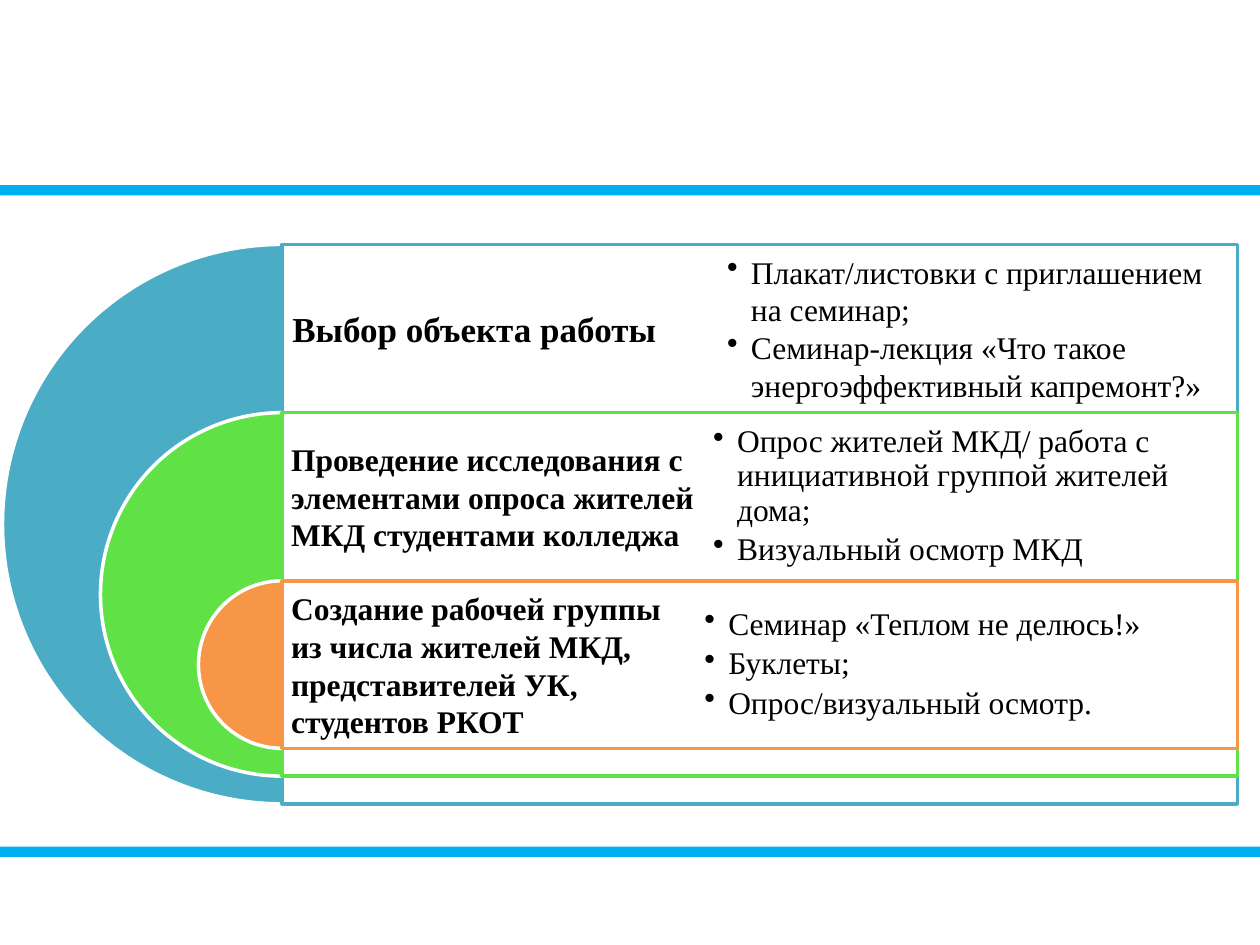
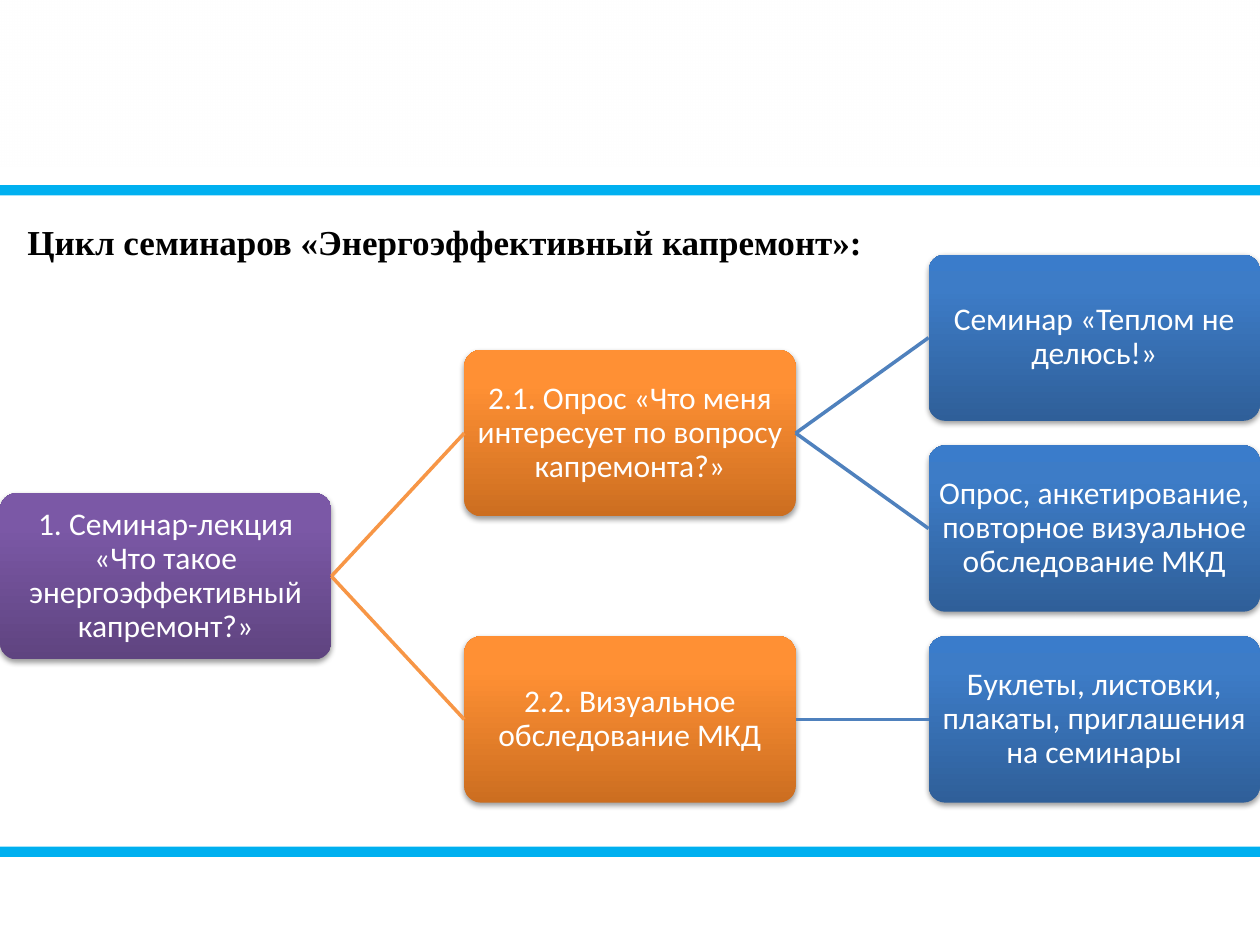
from dataclasses import dataclass

from lxml import etree
from pptx import Presentation
from pptx.dml.color import RGBColor
from pptx.enum.shapes import MSO_CONNECTOR, MSO_SHAPE
from pptx.enum.text import MSO_ANCHOR, PP_ALIGN
from pptx.oxml import parse_xml
from pptx.oxml.ns import nsdecls, qn
from pptx.util import Inches, Pt

RECT, PIE, ROUNDED = MSO_SHAPE.RECTANGLE, MSO_SHAPE.PIE, MSO_SHAPE.ROUNDED_RECTANGLE
STRAIGHT = MSO_CONNECTOR.STRAIGHT
TOP, MIDDLE = MSO_ANCHOR.TOP, MSO_ANCHOR.MIDDLE
LEFT, CENTER = PP_ALIGN.LEFT, PP_ALIGN.CENTER


@dataclass(frozen=True)
class Theme:
    serif: str = "Times New Roman"
    sans: str = "Calibri"
    heading: int = 20
    body: int = 18
    line: int = 2
    ink: str = "000000"
    paper: str = "FFFFFF"
    band: str = "00B0F0"
    teal: str = "4BACC6"
    green: str = "60E146"
    orange: str = "F79646"
    blue: str = "4F81BD"
    # Gradient stops: position, colour, opacity (percent)
    header: tuple = ((0, "FFFFFF", 100), (100, "FFFFFF", 46))
    violet_fade: tuple = ((0, "5F4480", 100), (80, "7B58A6", 100), (100, "7C57A8", 100))
    orange_fade: tuple = ((0, "CC6E20", 100), (80, "FF9034", 100), (100, "FF9136", 100))
    blue_fade: tuple = ((0, "2F5F99", 100), (80, "3D7CC7", 100), (100, "3A7CCB", 100))


theme = Theme()
deck = Presentation()
deck.slide_width, deck.slide_height = Inches(10), Inches(7.5)

# Grid of 100 columns by 75 rows
COL, ROW = deck.slide_width / 100, deck.slide_height / 75


def add_block(slide, kind, x, y, w, h, fill, line=None, angle=90):
    """Preset shape on the grid; fill is a colour or a tuple of gradient stops."""
    block = slide.shapes.add_shape(kind, int(x * COL), int(y * ROW), int(w * COL), int(h * ROW))
    block.shadow.inherit = False
    if isinstance(fill, str):
        block.fill.solid()
        block.fill.fore_color.rgb = RGBColor.from_string(fill)
    else:
        stops = "".join(
            f'<a:gs pos="{pos * 1000}"><a:srgbClr val="{colour}">'
            f'<a:alpha val="{opacity * 1000}"/></a:srgbClr></a:gs>'
            for pos, colour, opacity in fill)
        block._element.spPr.find(qn("a:prstGeom")).addnext(parse_xml(
            f'<a:gradFill {nsdecls("a")} rotWithShape="1"><a:gsLst>{stops}</a:gsLst>'
            f'<a:lin ang="{angle * 60000}" scaled="0"/></a:gradFill>'))
    if line:
        block.line.color.rgb = RGBColor.from_string(line)
        block.line.width = Pt(theme.line)
    else:
        block.line.fill.background()
    return block


def write(frame, lines, size, face, colour, bold=False, align=LEFT, anchor=MIDDLE,
          inset=None, spacing=1.0, after=0, bullets=False):
    """Fill a text frame with equally styled paragraphs."""
    frame.word_wrap = True
    frame.vertical_anchor = anchor
    if inset is not None:
        frame.margin_left = frame.margin_right = Inches(inset)
        frame.margin_top = frame.margin_bottom = Inches(inset)
    for number, line in enumerate(lines):
        paragraph = frame.add_paragraph() if number else frame.paragraphs[0]
        paragraph.text = line
        if bullets:
            properties = paragraph._p.get_or_add_pPr()
            properties.set("marL", str(Inches(0.19)))
            properties.set("indent", str(-Inches(0.19)))
            etree.SubElement(properties, qn("a:buChar")).set("char", "•")
        paragraph.alignment = align
        paragraph.line_spacing = spacing
        paragraph.space_after = Pt(after)
        paragraph.font.size, paragraph.font.name = Pt(size), face
        paragraph.font.bold = bold
        paragraph.font.color.rgb = RGBColor.from_string(colour)


# Shared header and bands
stages_slide, seminars_slide = [deck.slides.add_slide(deck.slide_layouts[6]) for _ in range(2)]
for slide in (stages_slide, seminars_slide):
    add_block(slide, RECT, 0, 0, 100, 13.2, theme.header)
    for band_row in (14.7, 67.2):
        add_block(slide, RECT, 0, band_row, 100, 0.8, theme.band)

# Slide 1: nested stages, each with its activities
# Colour, stage lines, stage size, inset, activity column, line spacing, space after, activities
stages = [
    (theme.teal, ["Выбор объекта работы"], theme.heading, 0.08, 55, 1.0, 0,
     ["Плакат/листовки с приглашением на семинар;",
      "Семинар-лекция «Что такое энергоэффективный капремонт?»"]),
    (theme.green,
     ["Проведение исследования с элементами опроса жителей МКД студентами колледжа"],
     theme.body, 0.07, 53.9, 0.9, 3,
     ["Опрос жителей МКД/ работа с инициативной группой жителей дома;",
      "Визуальный осмотр МКД"]),
    (theme.orange,
     ["Создание рабочей группы", "из числа жителей МКД, представителей УК,", "студентов РКОТ"],
     theme.body, 0.07, 53.2, 0.9, 3,
     ["Семинар «Теплом не делюсь!»", "Буклеты;", "Опрос/визуальный осмотр."]),
]
STAGE_LEFT, STAGE_RIGHT, STAGE_TOP = 22.4, 98.2, 19.4
STAGE_PITCH, STAGE_HEIGHT, OUTER, SHRINK = 13.35, 13.3, 44.4, 15.55

for depth, (colour, stage, size, inset, column, spacing, after, activities) in enumerate(stages):
    top, span = STAGE_TOP + depth * STAGE_PITCH, OUTER - depth * SHRINK
    half_disc = add_block(stages_slide, PIE, STAGE_LEFT - span / 2, top, span, span,
                          colour, theme.paper)
    half_disc.adjustments[0], half_disc.adjustments[1] = 54, 162
    panel = add_block(stages_slide, RECT, STAGE_LEFT, top, STAGE_RIGHT - STAGE_LEFT, span,
                      theme.paper, colour)
    panel_colour = panel._element.spPr.find(qn("a:solidFill"))[0]
    etree.SubElement(panel_colour, qn("a:alpha")).set("val", "90000")

    stage_label = stages_slide.shapes.add_textbox(
        int(STAGE_LEFT * COL), int(top * ROW), int(37.9 * COL), int(STAGE_HEIGHT * ROW))
    write(stage_label.text_frame, stage, size, theme.serif, theme.ink, bold=True, inset=inset)
    activity_list = stages_slide.shapes.add_textbox(
        int(column * COL), int(top * ROW), int((STAGE_RIGHT - column) * COL),
        int(STAGE_HEIGHT * ROW))
    write(activity_list.text_frame, activities, theme.body, theme.serif, theme.ink,
          inset=0.27, spacing=spacing, after=after, bullets=True)

# Slide 2: heading
heading = seminars_slide.shapes.add_textbox(
    int(1.2 * COL), int(17 * ROW), int(87.4 * COL), int(4.4 * ROW))
write(heading.text_frame, ["Цикл семинаров «Энергоэффективный капремонт»:"],
      theme.heading, theme.serif, theme.ink, bold=True, anchor=TOP)

# Slide 2: seminar tree; a step's row is counted in leaf rows
# Level, row, parent index, text
steps = [
    (0, 1.25, None, "1. Семинар-лекция «Что такое энергоэффективный капремонт?»"),
    (1, 0.5, 0, "2.1. Опрос «Что меня интересует по вопросу капремонта?»"),
    (1, 2, 0, "2.2. Визуальное обследование МКД"),
    (2, 0, 1, "Семинар «Теплом не делюсь!»"),
    (2, 1, 1, "Опрос, анкетирование, повторное визуальное обследование МКД"),
    (2, 2, 2, "Буклеты, листовки, плакаты, приглашения на семинары"),
]
level_fades = (theme.violet_fade, theme.orange_fade, theme.blue_fade)
level_links = (None, theme.orange, theme.blue)
STEP_WIDTH, STEP_HEIGHT, TREE_TOP = 26.3, 13.2, 20.2
LEVEL_PITCH, LEAF_PITCH = (100 - STEP_WIDTH) / 2, 15.15
RIGHT_SITE, LEFT_SITE = 3, 1

step_boxes = []
for level, row, parent, text in steps:
    step_box = add_block(seminars_slide, ROUNDED, level * LEVEL_PITCH,
                         TREE_TOP + row * LEAF_PITCH, STEP_WIDTH, STEP_HEIGHT,
                         level_fades[level], angle=270)
    step_box.adjustments[0] = 0.1
    step_box._element.spPr.find(qn("a:effectLst")).append(parse_xml(
        f'<a:outerShdw {nsdecls("a")} blurRad="{Pt(3.1)}" dist="{Pt(1.6)}" dir="5400000" '
        'rotWithShape="0"><a:srgbClr val="000000"><a:alpha val="38000"/></a:srgbClr>'
        '</a:outerShdw>'))
    write(step_box.text_frame, [text], theme.body, theme.sans, theme.paper,
          align=CENTER, inset=0.01, spacing=0.9)
    step_boxes.append(step_box)
    if parent is not None:
        link = seminars_slide.shapes.add_connector(STRAIGHT, 0, 0, 0, 0)
        link.begin_connect(step_boxes[parent], RIGHT_SITE)
        link.end_connect(step_box, LEFT_SITE)
        link.line.color.rgb = RGBColor.from_string(level_links[level])
        link.line.width = Pt(theme.line)
        etree.SubElement(link._element.spPr, qn("a:effectLst"))

deck.save("out.pptx")
